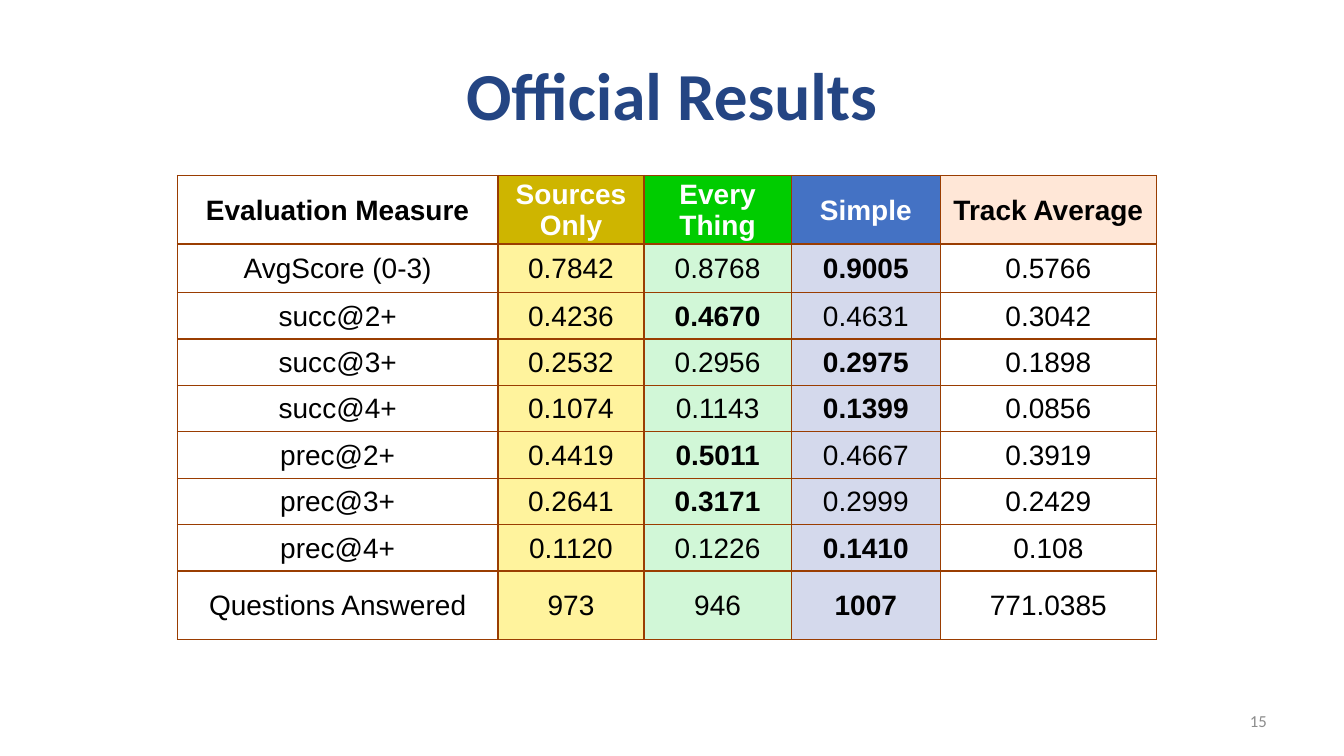
from lxml.etree import SubElement
from pptx import Presentation
from pptx.dml.color import RGBColor
from pptx.enum.text import MSO_ANCHOR, PP_ALIGN
from pptx.oxml.ns import qn
from pptx.util import Cm, Pt

# Content
TITLE = "Official Results"
PAGE_NUMBER = "15"
HEADERS = ["Evaluation Measure", "Sources Only", "Every Thing", "Simple", "Track Average"]
RESULTS = [
    ("AvgScore (0-3)", "0.7842", "0.8768", "0.9005", "0.5766"),
    ("succ@2+", "0.4236", "0.4670", "0.4631", "0.3042"),
    ("succ@3+", "0.2532", "0.2956", "0.2975", "0.1898"),
    ("succ@4+", "0.1074", "0.1143", "0.1399", "0.0856"),
    ("prec@2+", "0.4419", "0.5011", "0.4667", "0.3919"),
    ("prec@3+", "0.2641", "0.3171", "0.2999", "0.2429"),
    ("prec@4+", "0.1120", "0.1226", "0.1410", "0.108"),
    ("Questions Answered", "973", "946", "1007", "771.0385"),
]

COLORS = {
    "title": "244583", "page": "8C8C8C", "border": "9A3D01",
    "black": "000000", "white": "FFFFFF",
    "gold": "CEB500", "green": "00CC00", "blue": "4472C4", "peach": "FFE7D7",
    "pale gold": "FFF39D", "pale green": "D1F7D7", "pale blue": "D4D9EC",
}
HEADER_FILLS = ["white", "gold", "green", "blue", "peach"]
HEADER_INKS = ["black", "white", "white", "white", "black"]
BODY_FILLS = ["white", "pale gold", "pale green", "pale blue", "white"]

# Lengths in centimetres
TABLE_LEFT, TABLE_TOP = 4.47, 4.42
COLUMN_WIDTHS = [8.08, 3.68, 3.71, 3.76, 5.44]
ROW_HEIGHTS = [1.73, 1.22] + [1.17] * 6 + [1.73]


def color(name):
    return RGBColor.from_string(COLORS[name])


def style_paragraph(paragraph, font_name, size, ink, bold, alignment):
    paragraph.alignment = alignment
    font = paragraph.font
    font.name, font.size, font.bold = font_name, Pt(size), bold
    font.color.rgb = color(ink)


def add_text(slide, box, text, size, ink, bold, alignment):
    frame = slide.shapes.add_textbox(*map(Cm, box)).text_frame
    frame.word_wrap = True
    frame.vertical_anchor = MSO_ANCHOR.MIDDLE
    frame.text = text
    style_paragraph(frame.paragraphs[0], "Calibri", size, ink, bold, alignment)


def add_borders(cell):
    properties = cell._tc.get_or_add_tcPr()
    for side in ("a:lnL", "a:lnR", "a:lnT", "a:lnB"):
        line = SubElement(properties, qn(side), w=str(Pt(1)))
        fill = SubElement(line, qn("a:solidFill"))
        SubElement(fill, qn("a:srgbClr"), val=COLORS["border"])


def fill_cell(cell, text, fill, ink, bold):
    add_borders(cell)
    cell.fill.solid()
    cell.fill.fore_color.rgb = color(fill)
    cell.margin_left = cell.margin_right = cell.margin_top = Cm(0.03)
    cell.margin_bottom = 0
    cell.vertical_anchor = MSO_ANCHOR.MIDDLE
    cell.text = text
    style_paragraph(cell.text_frame.paragraphs[0], "Arial", 20, ink, bold, PP_ALIGN.CENTER)


def add_results_table(slide):
    table = slide.shapes.add_table(
        len(ROW_HEIGHTS), len(COLUMN_WIDTHS), Cm(TABLE_LEFT), Cm(TABLE_TOP),
        Cm(sum(COLUMN_WIDTHS)), Cm(sum(ROW_HEIGHTS))).table
    table.first_row = table.horz_banding = False
    for column, width in zip(table.columns, COLUMN_WIDTHS):
        column.width = Cm(width)
    for row, height in zip(table.rows, ROW_HEIGHTS):
        row.height = Cm(height)

    for index, header in enumerate(zip(HEADERS, HEADER_FILLS, HEADER_INKS)):
        fill_cell(table.cell(0, index), *header, True)

    # The best score of each row is bold
    for row_index, result in enumerate(RESULTS, start=1):
        best = max(result[1:], key=float)
        for index, (text, fill) in enumerate(zip(result, BODY_FILLS)):
            fill_cell(table.cell(row_index, index), text, fill, "black", text == best)


def main():
    presentation = Presentation()
    presentation.slide_width, presentation.slide_height = Cm(33.87), Cm(19.05)
    slide = presentation.slides.add_slide(presentation.slide_layouts[6])

    add_text(slide, (1.69, 0.76, 30.48, 3.18), TITLE, 48, "title", True, PP_ALIGN.CENTER)
    add_results_table(slide)
    add_text(slide, (24.28, 17.65, 7.9, 1.02), PAGE_NUMBER, 12, "page", False, PP_ALIGN.RIGHT)

    presentation.save("out.pptx")


if __name__ == "__main__":
    main()
